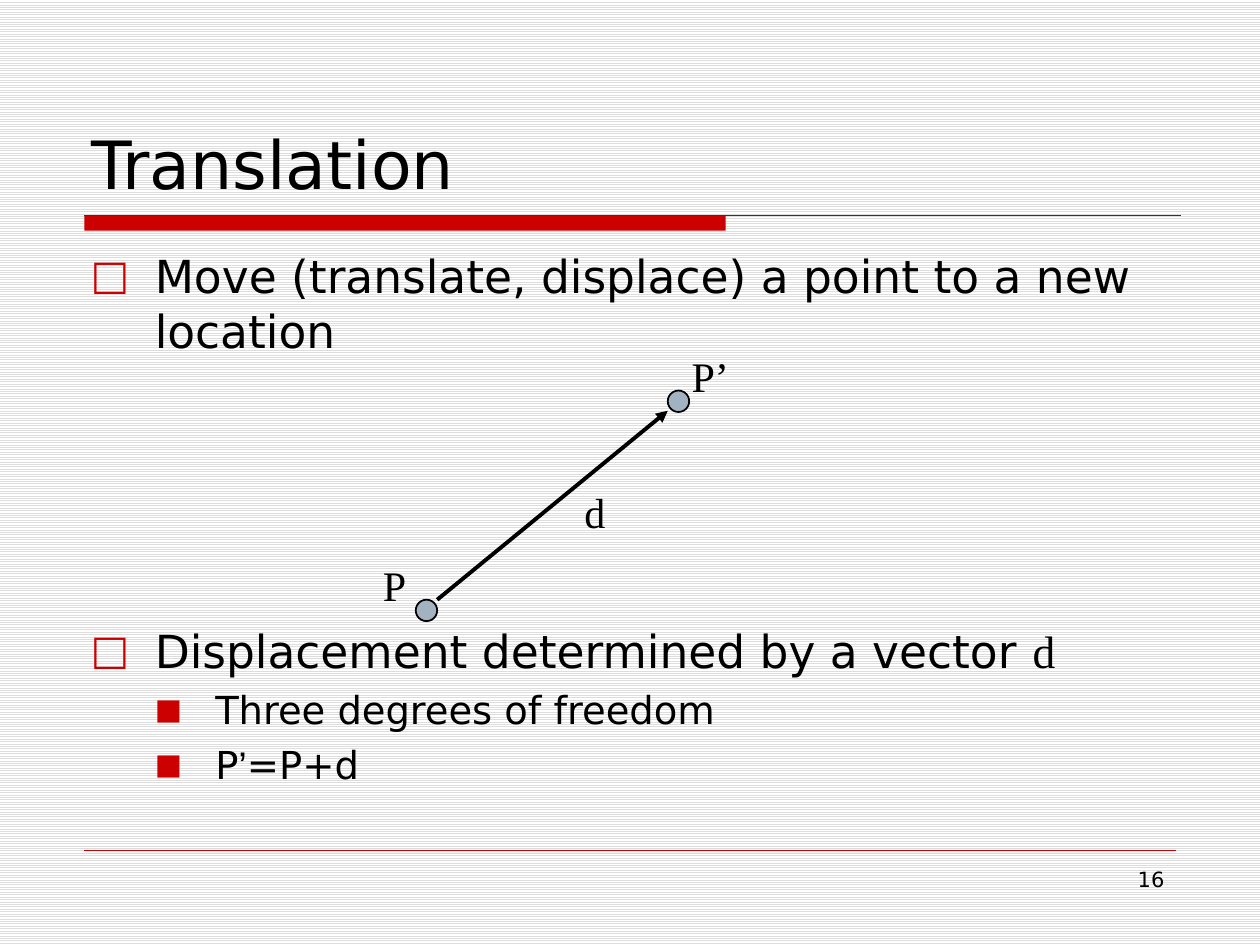
from lxml import etree
from pptx import Presentation
from pptx.dml.color import RGBColor
from pptx.enum.dml import MSO_PATTERN
from pptx.enum.shapes import MSO_CONNECTOR, MSO_SHAPE
from pptx.enum.text import MSO_ANCHOR, PP_ALIGN
from pptx.oxml.ns import qn
from pptx.util import Inches, Pt

BLACK = RGBColor(0x00, 0x00, 0x00)
WHITE = RGBColor(0xFF, 0xFF, 0xFF)
RED = RGBColor(0xCC, 0x00, 0x00)
STEEL = RGBColor(0xA3, 0xB2, 0xC1)
DARK = RGBColor(0x33, 0x33, 0x33)
STRIPE = RGBColor(0xDD, 0xDD, 0xDD)
SANS, SERIF, ARIAL = "DejaVu Sans", "Times New Roman", "Arial"
RECT, OVAL = MSO_SHAPE.RECTANGLE, MSO_SHAPE.OVAL
STRAIGHT = MSO_CONNECTOR.STRAIGHT
TOP, BOTTOM = MSO_ANCHOR.TOP, MSO_ANCHOR.BOTTOM
LEFT, RIGHT = PP_ALIGN.LEFT, PP_ALIGN.RIGHT
DOT = 0.17


class Painter:
    def __init__(self, slide):
        self.slide = slide
        self.shapes = slide.shapes

    def ground(self):
        fill = self.slide.background.fill
        fill.patterned()
        fill.pattern = MSO_PATTERN.LIGHT_HORIZONTAL
        fill.fore_color.rgb = STRIPE
        fill.back_color.rgb = WHITE

    def shape(self, kind, x, y, w, h, color, width=0):
        item = self.shapes.add_shape(kind, Inches(x), Inches(y), Inches(w), Inches(h))
        item.shadow.inherit = False
        item.fill.solid()
        item.fill.fore_color.rgb = color
        if width:
            item.line.color.rgb = BLACK
            item.line.width = Pt(width)
        else:
            item.line.fill.background()

    def line(self, x1, y1, x2, y2, color, width, arrow=False):
        item = self.shapes.add_connector(
            STRAIGHT, Inches(x1), Inches(y1), Inches(x2), Inches(y2))
        item.line.color.rgb = color
        item.line.width = Pt(width)
        if arrow:
            etree.SubElement(item.line._get_or_add_ln(), qn("a:tailEnd"), type="triangle")
        etree.SubElement(item._element.spPr, qn("a:effectLst"))

    def frame(self, x, y, w, h, wrap=True, anchor=TOP):
        box = self.shapes.add_textbox(Inches(x), Inches(y), Inches(w), Inches(h))
        box.text_frame.word_wrap = wrap
        box.text_frame.vertical_anchor = anchor
        return box.text_frame

    def style(self, run, size, font):
        run.font.size = Pt(size)
        run.font.name = font
        run.font.color.rgb = BLACK

    def text(self, words, x, y, w, h, size, font=SANS, wrap=True, anchor=TOP, align=LEFT):
        frame = self.frame(x, y, w, h, wrap, anchor)
        frame.text = words
        para = frame.paragraphs[0]
        para.alignment = align
        self.style(para.runs[0], size, font)

    def label(self, words, x, y, w):
        self.text(words, x, y, w, 0.5, 24, SERIF, wrap=False)

    def bullet(self, para, mark, scale, margin, hang):
        props = para._p.get_or_add_pPr()
        props.set("marL", str(Inches(margin)))
        props.set("indent", str(-Inches(hang)))
        color = etree.SubElement(props, qn("a:buClr"))
        etree.SubElement(color, qn("a:srgbClr"), val=str(RED))
        etree.SubElement(props, qn("a:buSzPct"), val=str(scale * 1000))
        etree.SubElement(props, qn("a:buFont"), typeface=SANS)
        etree.SubElement(props, qn("a:buChar"), char=mark)

    def points(self, items, x, y, w, h):
        """Each item is level, space before, then (words, font) pairs."""
        looks = [(26, "□", 90, 0.51, 0.51), (22, "■", 75, 0.99, 0.48)]
        frame = self.frame(x, y, w, h)
        for i, (level, gap, parts) in enumerate(items):
            para = frame.add_paragraph() if i else frame.paragraphs[0]
            size, *mark = looks[level]
            para.level = level
            para.space_before = Pt(gap)
            self.bullet(para, *mark)
            for words, font in parts:
                run = para.add_run()
                run.text = words
                self.style(run, size, font)


def main():
    deck = Presentation()
    deck.slide_width, deck.slide_height = Inches(10), Inches(7.5)
    art = Painter(deck.slides.add_slide(deck.slide_layouts[6]))
    art.ground()
    art.shape(RECT, 0.67, 1.71, 5.09, 0.12, RED)
    art.line(0.67, 1.71, 9.37, 1.71, DARK, 0.75)
    art.line(0.67, 6.75, 9.33, 6.75, RED, 0.25)

    art.text("Translation", 0.63, 0.33, 8.75, 1.33, 38, anchor=BOTTOM)
    art.points([
        (0, 2, [("Move (translate, displace) a point to a new location", SANS)]),
        (0, 152, [("Displacement determined by a vector ", SANS), ("d", SERIF)]),
        (1, 5, [("Three degrees of freedom", SANS)]),
        (1, 5, [("P", SANS), ("’", ARIAL), ("=P+d", SANS)]),
    ], 0.62, 1.92, 8.75, 4.67)

    art.label("P", 2.94, 4.39, 0.39)
    art.label("P’", 5.39, 2.73, 0.5)
    for x, y in [(3.3, 4.76), (5.3, 3.1)]:
        art.shape(OVAL, x, y, DOT, DOT, STEEL, 1)
    art.line(3.47, 4.76, 5.3, 3.26, BLACK, 2.25, arrow=True)
    art.label("d", 4.54, 3.81, 0.37)
    art.text("16", 7.17, 6.83, 2.17, 0.52, 12, align=RIGHT)
    deck.save("out.pptx")


if __name__ == "__main__":
    main()
